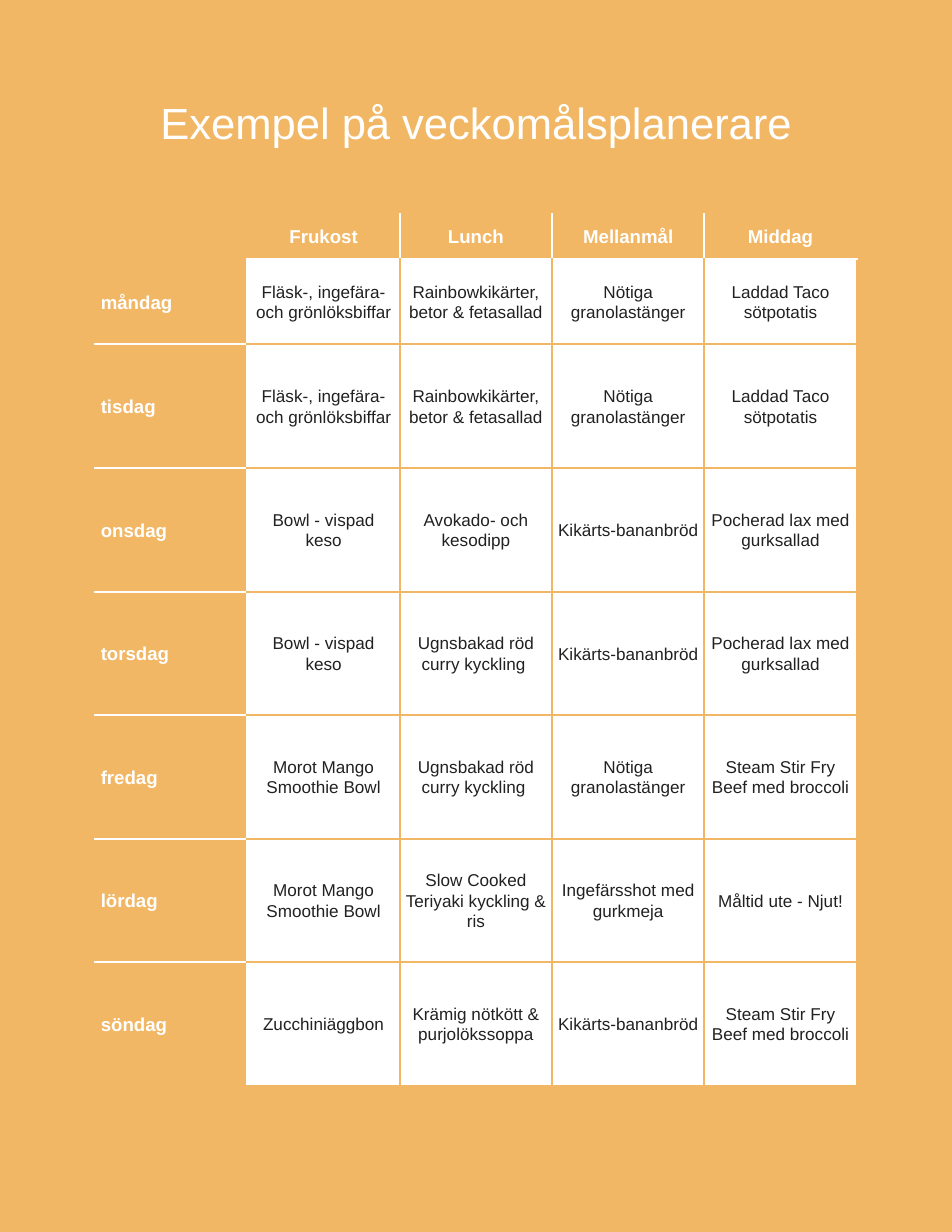
from lxml.etree import SubElement
from pptx import Presentation
from pptx.dml.color import RGBColor
from pptx.enum.text import MSO_ANCHOR, PP_ALIGN
from pptx.oxml.ns import qn
from pptx.util import Inches, Pt

COLORS = {"orange": "F1B765", "white": "FFFFFF", "ink": "212121"}
FONT = "Arial"
MEALS = ["", "Frukost", "Lunch", "Mellanmål", "Middag"]
PORK = "Fläsk-, ingefära- och grönlöksbiffar"
CHICKPEAS = "Rainbowkikärter, betor & fetasallad"
GRANOLA = "Nötiga granolastänger"
TACO = "Laddad Taco sötpotatis"
BOWL = "Bowl - vispad keso"
BREAD = "Kikärts-bananbröd"
SALMON = "Pocherad lax med gurksallad"
CURRY = "Ugnsbakad röd curry kyckling "
SMOOTHIE = "Morot Mango Smoothie Bowl"
BEEF = "Steam Stir Fry Beef med broccoli"
WEEK = [
    ["måndag", PORK, CHICKPEAS, GRANOLA, TACO],
    ["tisdag", PORK, CHICKPEAS, GRANOLA, TACO],
    ["onsdag", BOWL, "Avokado- och kesodipp", BREAD, SALMON],
    ["torsdag", BOWL, CURRY, BREAD, SALMON],
    ["fredag", SMOOTHIE, CURRY, GRANOLA, BEEF],
    ["lördag", SMOOTHIE, "Slow Cooked Teriyaki kyckling & ris",
     "Ingefärsshot med gurkmeja", "Måltid ute - Njut!"],
    ["söndag", "Zucchiniäggbon", "Krämig nötkött & purjolökssoppa", BREAD, BEEF],
]


def rgb(name):
    """Return the named colour."""
    return RGBColor.from_string(COLORS[name])


def write(p, text, size, color, spacing, align, bold=False):
    """Fill a paragraph and format its runs."""
    p.text = text
    p.alignment = align
    p.line_spacing = Pt(spacing)
    for r in p.runs:
        r.font.name = FONT
        r.font.size = Pt(size)
        r.font.bold = bold
        r.font.color.rgb = rgb(color)


def set_borders(cell, white_sides):
    """Draw four borders, white on the given sides and orange elsewhere."""
    tcPr = cell._tc.get_or_add_tcPr()
    for side in "LRTB":
        ln = SubElement(tcPr, qn(f"a:ln{side}"), w=str(Pt(1.5)))
        fill = SubElement(ln, qn("a:solidFill"))
        color = COLORS["white" if side in white_sides else "orange"]
        SubElement(fill, qn("a:srgbClr"), val=color)


def find_white_sides(row, col, last_row, last_col):
    """Return the sides of a cell that separate headings or adjoin them."""
    if row == 0 and col == 0:
        return ""
    if row == 0:
        return "B" + ("L" if col > 1 else "") + ("R" if col < last_col else "")
    if col == 0:
        return "R" + ("T" if row > 1 else "") + ("B" if row < last_row else "")
    return ("L" if col == 1 else "") + ("T" if row == 1 else "")


def add_title(s, left, top, width, height):
    """Add the centred page title."""
    sp = s.shapes.add_textbox(left, top, width, height)
    tf = sp.text_frame
    tf.word_wrap = True
    tf.margin_left = tf.margin_right = tf.margin_top = tf.margin_bottom = 0
    write(tf.paragraphs[0], "Exempel på veckomålsplanerare", 28, "white", 39.2,
          PP_ALIGN.CENTER)


def add_planner(s, left, top, width, height):
    """Add the meal table with days as rows and meals as columns."""
    rows = [MEALS] + WEEK
    last_row, last_col = len(rows) - 1, len(MEALS) - 1
    table = s.shapes.add_table(len(rows), len(MEALS), left, top, width, height).table
    table.first_row = table.horz_banding = False
    for column in table.columns:
        column.width = width // len(MEALS)
    heights = [Inches(0.37), Inches(0.76)]
    heights += [(height - sum(heights)) // (len(rows) - 2)] * (len(rows) - 2)
    for i, texts in enumerate(rows):
        table.rows[i].height = heights[i]
        for j, text in enumerate(texts):
            cell = table.cell(i, j)
            cell.vertical_anchor = MSO_ANCHOR.MIDDLE
            cell.margin_left = cell.margin_right = Inches(0.05)
            cell.margin_top = cell.margin_bottom = Inches(0.05)
            set_borders(cell, find_white_sides(i, j, last_row, last_col))
            p = cell.text_frame.paragraphs[0]
            align = PP_ALIGN.CENTER if j else PP_ALIGN.LEFT
            if i and j:
                cell.fill.solid()
                cell.fill.fore_color.rgb = rgb("white")
                write(p, text, 11, "ink", 13.2, align)
            else:
                cell.fill.background()
                write(p, text, 12, "white", 14.4, align, bold=True)


def main():
    """Build the weekly meal planner."""
    prs = Presentation()
    prs.slide_width, prs.slide_height = Inches(8.5), Inches(11)
    s = prs.slides.add_slide(prs.slide_layouts[6])
    s.background.fill.solid()
    s.background.fill.fore_color.rgb = rgb("orange")
    add_planner(s, Inches(0.85), Inches(1.91), Inches(6.8), Inches(7.75))
    add_title(s, Inches(0.85), Inches(0.78), Inches(6.8), Inches(0.54))
    prs.save("out.pptx")


if __name__ == "__main__":
    main()
